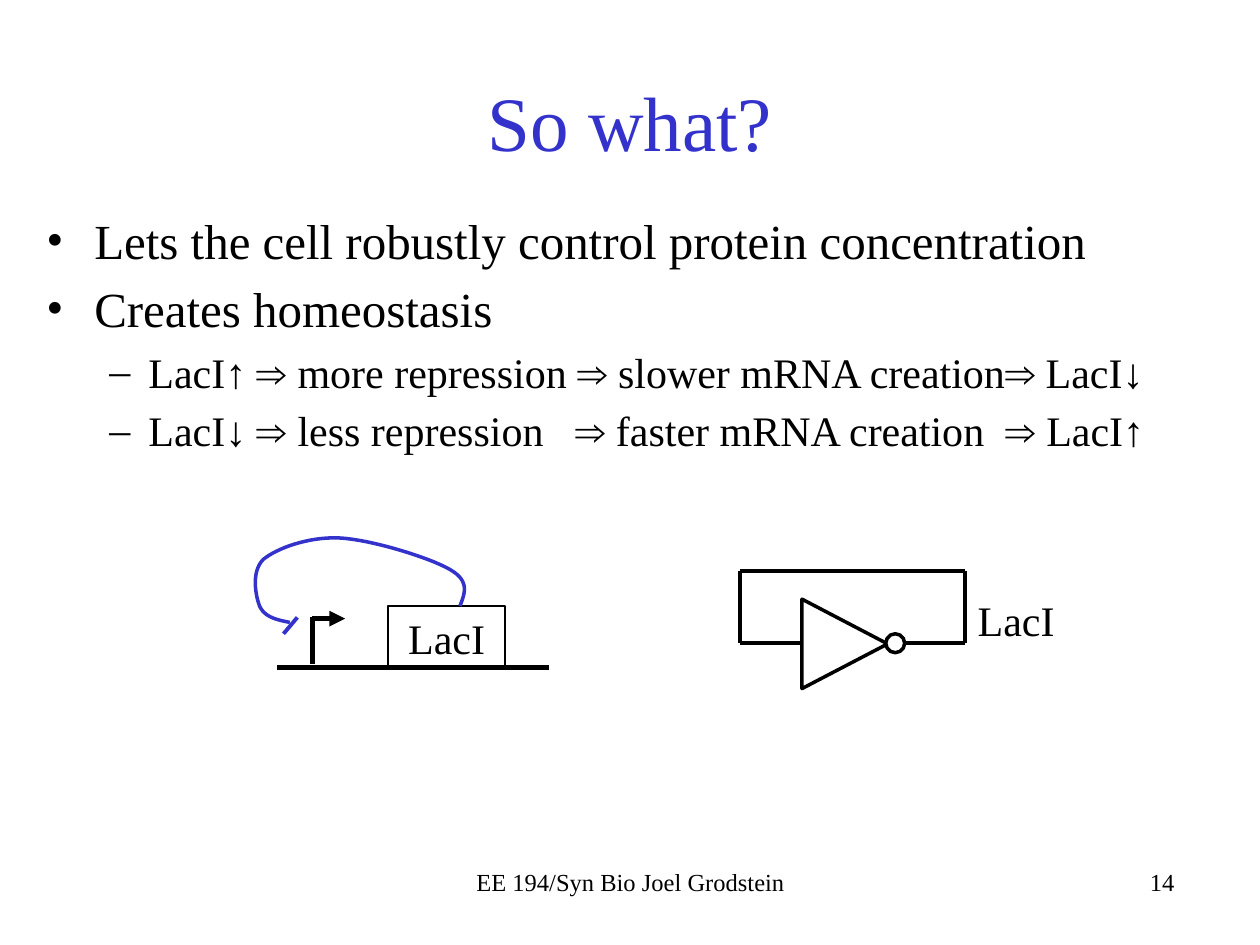
import pptx
import pptx.dml.color
import pptx.enum.shapes
import pptx.enum.text
import pptx.oxml.ns
import pptx.util
import lxml.etree

Inches = pptx.util.Inches
Align = pptx.enum.text.PP_ALIGN
Anchor = pptx.enum.text.MSO_ANCHOR
Preset = pptx.enum.shapes.MSO_SHAPE
BLACK = pptx.dml.color.RGBColor(0, 0, 0)
WHITE = pptx.dml.color.RGBColor(255, 255, 255)
BLUE = pptx.dml.color.RGBColor(0x33, 0x33, 0xCC)


class SlideWriter:
    """Holds the style and the current slide, and draws each kind of element."""

    font = "Times New Roman"

    def __init__(self, page):
        self.page = page

    def child(self, parent, tag, **values):
        element = lxml.etree.SubElement(parent, pptx.oxml.ns.qn(tag))
        for name, value in values.items():
            element.set(name, str(value))
        return element

    def span(self, para, words, size, color=BLACK, spacing=0):
        span = para.add_run()
        span.text = words
        span.font.size = pptx.util.Pt(size)
        span.font.name = self.font
        span.font.color.rgb = color
        if spacing:
            span.font._element.set("spc", str(spacing * 100))

    def text(self, place, words="", size=24, color=BLACK, align=Align.LEFT,
             anchor=Anchor.TOP, tight=False):
        box = self.page.shapes.add_textbox(*map(Inches, place))
        frame = box.text_frame
        frame.word_wrap = not tight
        frame.vertical_anchor = anchor
        if tight:
            frame.margin_left = frame.margin_right = 0
            frame.margin_top = frame.margin_bottom = 0
        para = frame.paragraphs[0]
        para.alignment = align
        if words:
            self.span(para, words, size, color)
        return box

    def bullets(self, place, items):
        frame = self.text(place).text_frame
        for index, (level, spans) in enumerate(items):
            para = frame.add_paragraph() if index else frame.paragraphs[0]
            para.level = level
            margin, indent, mark, size = [(0.38, -0.38, "•", 28), (0.81, -0.31, "–", 24)][level]
            style = para._p.get_or_add_pPr()
            style.set("marL", str(Inches(margin)))
            style.set("indent", str(Inches(indent)))
            self.child(self.child(style, "a:spcBef"), "a:spcPct", val=20000)
            self.child(style, "a:buFont", typeface=self.font)
            self.child(style, "a:buChar", char=mark)
            for words, spacing in spans:
                self.span(para, words, size, spacing=spacing)

    def outline(self, shape, width, color, fill=None):
        shape.shadow.inherit = False
        if fill is None:
            shape.fill.background()
        else:
            shape.fill.solid()
            shape.fill.fore_color.rgb = fill
        shape.line.color.rgb = color
        shape.line.width = pptx.util.Pt(width)

    def shape(self, preset, place, width, fill=None, words="", rotation=0):
        shape = self.page.shapes.add_shape(preset, *map(Inches, place))
        shape.rotation = rotation
        self.outline(shape, width, BLACK, fill)
        if words:
            para = shape.text_frame.paragraphs[0]
            para.alignment = Align.CENTER
            self.span(para, words, 24)

    def line(self, start, end, width=2.25, color=BLACK, arrow=False):
        line = self.page.shapes.add_connector(
            pptx.enum.shapes.MSO_CONNECTOR.STRAIGHT, *map(Inches, start + end))
        line.line.color.rgb = color
        line.line.width = pptx.util.Pt(width)
        if arrow:
            self.child(line.line._get_or_add_ln(), "a:tailEnd", type="triangle")
        self.child(line._element.spPr, "a:effectLst")

    def curve(self, start, segments, width, color, steps=16):
        points, origin = [], start
        for first, second, end in segments:
            for step in range(1, steps + 1):
                t = step / steps
                weights = ((1 - t) ** 3, 3 * t * (1 - t) ** 2, 3 * t * t * (1 - t), t ** 3)
                points.append(tuple(
                    Inches(sum(w * p[axis] for w, p in zip(weights, (origin, first, second, end))))
                    for axis in (0, 1)))
            origin = end
        builder = self.page.shapes.build_freeform(*map(Inches, start))
        builder.add_line_segments(points, close=False)
        self.outline(builder.convert_to_shape(), width, color)


def draw_gene(writer):
    writer.line((2.2, 5.3), (4.36, 5.3), 3)
    writer.line((2.48, 4.9), (2.48, 5.27), 3)
    writer.line((2.48, 4.91), (2.74, 4.91), 3, arrow=True)
    writer.shape(Preset.RECTANGLE, (3.08, 4.81, 0.93, 0.5), 1.5, words="LacI")
    writer.line((2.25, 5.03), (2.36, 4.9), color=BLUE)
    writer.curve((3.65, 4.81), [
        ((3.69, 4.71), (3.73, 4.61), (3.57, 4.52)),
        ((3.42, 4.43), (2.94, 4.28), (2.69, 4.27)),
        ((2.45, 4.26), (2.2, 4.35), (2.09, 4.44)),
        ((1.99, 4.54), (2.03, 4.73), (2.06, 4.81)),
        ((2.1, 4.9), (2.2, 4.92), (2.3, 4.94)),
    ], 2, BLUE)


def draw_inverter(writer):
    left, right, top, bottom = 5.87, 7.66, 4.53, 5.1
    writer.line((left, bottom), (right, bottom))
    writer.shape(Preset.FLOWCHART_MERGE, (6.35, 4.77, 0.71, 0.68), 2, WHITE, rotation=270)
    writer.shape(Preset.OVAL, (7.03, 5.03, 0.15, 0.15), 2, WHITE)
    writer.line((left, top), (right, top))
    for side in (left, right):
        writer.line((side, top), (side, bottom))
    writer.text((7.76, 4.72, 0.62, 0.4), "LacI", tight=True)


def main():
    deck = pptx.Presentation()
    deck.slide_width, deck.slide_height = Inches(10), Inches(7.5)
    writer = SlideWriter(deck.slides.add_slide(deck.slide_layouts[6]))
    writer.text((6.25, 6.83, 3.17, 0.5), "14", 14, align=Align.RIGHT)
    writer.text((0.75, 0.33, 8.5, 1.25), "So what?", 44, BLUE, Align.CENTER, Anchor.MIDDLE)
    writer.bullets((0.27, 1.62, 9.39, 2.1), [
        (0, [("Lets the cell robustly control protein concentration", 0)]),
        (0, [("Creates homeostasis", 0)]),
        (1, [("LacI↑ ⇒ more repression ⇒ slower mRNA creation⇒ LacI↓", 0)]),
        (1, [("LacI↓ ⇒ less repression", 0), (" ", 12), ("⇒ faster mRNA creation", 0),
             (" ", 6), ("⇒ LacI↑", 0)]),
    ])
    writer.text((3.42, 6.83, 3.17, 0.5), "EE 194/Syn Bio Joel Grodstein", 14, align=Align.CENTER)
    draw_gene(writer)
    draw_inverter(writer)
    deck.save("out.pptx")


if __name__ == "__main__":
    main()
